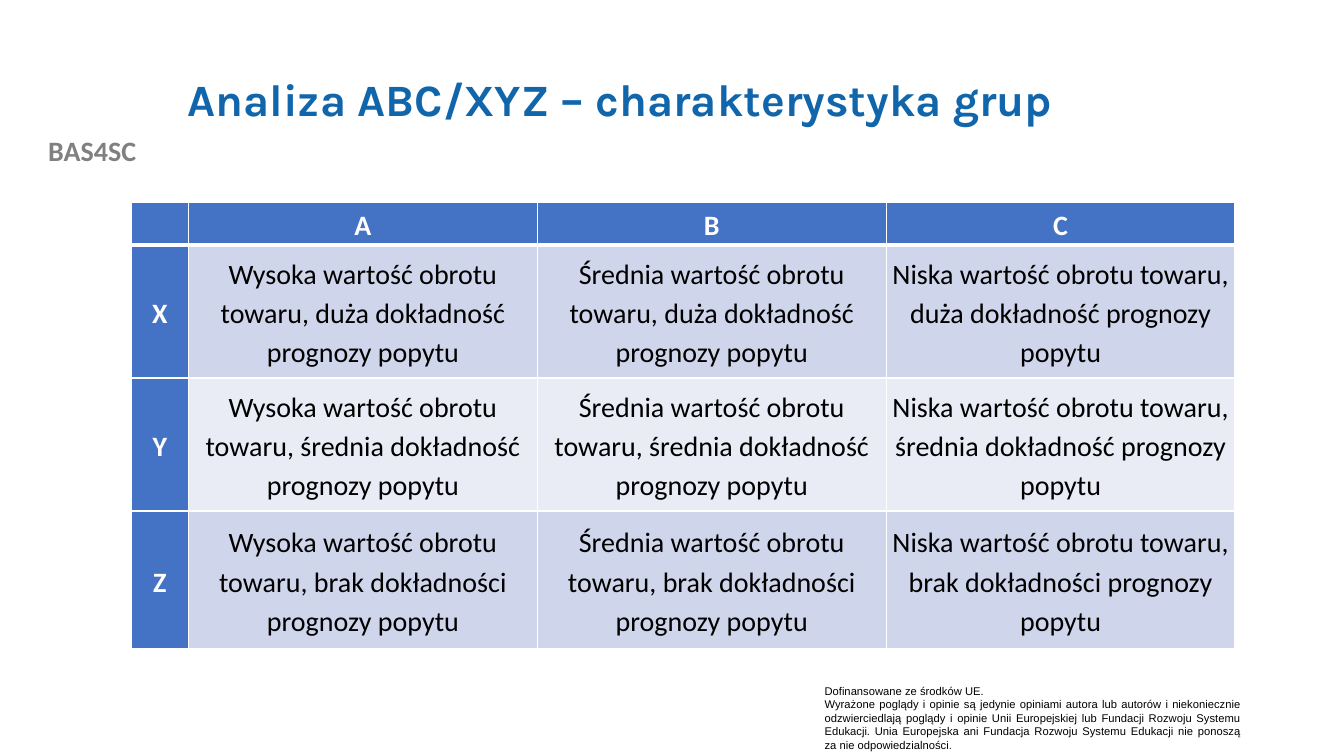
import dataclasses

import lxml.etree
import pptx
import pptx.dml.color
import pptx.enum.text
import pptx.oxml.ns
import pptx.util

PX = 9144  # EMU, 100 px to the inch
WHITE, BLACK, BLUE = "FFFFFF", "000000", "4472C4"
BANDS = ("CFD5EA", "E9EBF5")
ALIGN = pptx.enum.text.PP_ALIGN
MIDDLE = pptx.enum.text.MSO_ANCHOR.MIDDLE
FIT = pptx.enum.text.MSO_AUTO_SIZE


@dataclasses.dataclass(frozen=True)
class Box:
    left: int
    top: int
    width: int
    height: int

    def emu(self) -> tuple:
        return tuple(px(v) for v in dataclasses.astuple(self))


@dataclasses.dataclass(frozen=True)
class Style:
    face: str
    size: float
    color: str
    bold: bool = False
    align: ALIGN = ALIGN.CENTER


@dataclasses.dataclass(frozen=True)
class Note:
    box: Box
    style: Style
    lines: tuple


LABEL = Style("Calibri", 20, WHITE, True)
BODY = Style("Calibri", 20, BLACK)
TITLE = Style("Karla", 32, "1065AB", True, ALIGN.LEFT)
FOOT = Style("Arial", 8, BLACK, False, ALIGN.JUSTIFY)

NOTES = (
    Note(Box(0, 128, 183, 44), Style("Calibri", 20, "808080", True), ("BAS4SC",)),
    Note(Box(808, 674, 433, 77), FOOT, (
        "Dofinansowane ze środków UE.",
        "Wyrażone poglądy i opinie są jedynie opiniami autora lub autorów i "
        "niekoniecznie odzwierciedlają poglądy i opinie Unii Europejskiej lub "
        "Fundacji Rozwoju Systemu Edukacji. Unia Europejska ani Fundacja Rozwoju "
        "Systemu Edukacji nie ponoszą za nie odpowiedzialności",
    )),
)

GRID = Box(130, 201, 1095, 444)
COLS = (57, 346, 346, 346)
ROWS = (42, 132, 132, 137)
VALUES = {"A": "Wysoka", "B": "Średnia", "C": "Niska"}
FORECASTS = {
    "X": "duża dokładność",
    "Y": "średnia dokładność",
    "Z": "brak dokładności",
}


def px(count: int) -> pptx.util.Emu:
    return pptx.util.Emu(count * PX)


def rgb(code: str) -> pptx.dml.color.RGBColor:
    return pptx.dml.color.RGBColor.from_string(code)


def dress(para, style: Style) -> None:
    """Give a paragraph its alignment and font."""
    para.alignment = style.align
    font = para.font
    font.name, font.size, font.bold = style.face, pptx.util.Pt(style.size), style.bold
    font.color.rgb = rgb(style.color)


def edge(cell, side: str, width: int) -> None:
    """Draw one white border of a cell."""
    qn = pptx.oxml.ns.qn
    line = lxml.etree.SubElement(
        cell._tc.get_or_add_tcPr(), qn(f"a:ln{side}"), w=str(pptx.util.Pt(width)))
    fill = lxml.etree.SubElement(line, qn("a:solidFill"))
    lxml.etree.SubElement(fill, qn("a:srgbClr"), val=WHITE)


def add_note(slide, note: Note):
    frame = slide.shapes.add_textbox(*note.box.emu()).text_frame
    frame.word_wrap = True
    frame.auto_size = FIT.SHAPE_TO_FIT_TEXT
    frame.text = "\n".join(note.lines)
    for para in frame.paragraphs:
        dress(para, note.style)
    return frame


def add_title(slide, text: str) -> None:
    title = slide.shapes.title
    title.left, title.top, title.width, title.height = Box(176, 40, 1066, 122).emu()
    frame = title.text_frame
    frame.text = text
    frame.auto_size = FIT.NONE
    frame.vertical_anchor = MIDDLE
    para = frame.paragraphs[0]
    para.line_spacing = 0.9
    dress(para, TITLE)


def fill_cell(cell, text: str, row: int, col: int) -> None:
    head = row == 0 or col == 0
    edge(cell, "L", 1)
    edge(cell, "R", 1)
    edge(cell, "T", 3 if row == 1 else 1)
    edge(cell, "B", 3 if row == 0 else 1)
    cell.fill.solid()
    cell.fill.fore_color.rgb = rgb(BLUE if head else BANDS[(row - 1) % 2])
    cell.margin_left = cell.margin_right = px(6)
    cell.margin_top = cell.margin_bottom = 0
    cell.vertical_anchor = MIDDLE
    cell.text = text
    para = cell.text_frame.paragraphs[0]
    para.line_spacing = 1.15
    para.space_after = pptx.util.Pt(6)
    dress(para, LABEL if head else BODY)


def add_grid(slide) -> None:
    table = slide.shapes.add_table(len(ROWS), len(COLS), *GRID.emu()).table
    table.first_row = table.horz_banding = False
    for col, width in zip(table.columns, COLS):
        col.width = px(width)
    for row, height in zip(table.rows, ROWS):
        row.height = px(height)
    texts = [["", *VALUES]]
    for name, trust in FORECASTS.items():
        texts.append([name] + [
            f"{value} wartość obrotu towaru, {trust} prognozy popytu"
            for value in VALUES.values()])
    for row, line in enumerate(texts):
        for col, text in enumerate(line):
            fill_cell(table.cell(row, col), text, row, col)


def main() -> None:
    deck = pptx.Presentation()
    deck.slide_width, deck.slide_height = px(1333), px(750)
    slide = deck.slides.add_slide(deck.slide_layouts[5])
    add_title(slide, "Analiza ABC/XYZ – charakterystyka grup")
    frames = [add_note(slide, note) for note in NOTES]
    stop = frames[-1].paragraphs[-1].add_run()
    stop.text = "."
    stop.font.size = pptx.util.Pt(7)
    add_grid(slide)
    deck.save("out.pptx")


if __name__ == "__main__":
    main()
